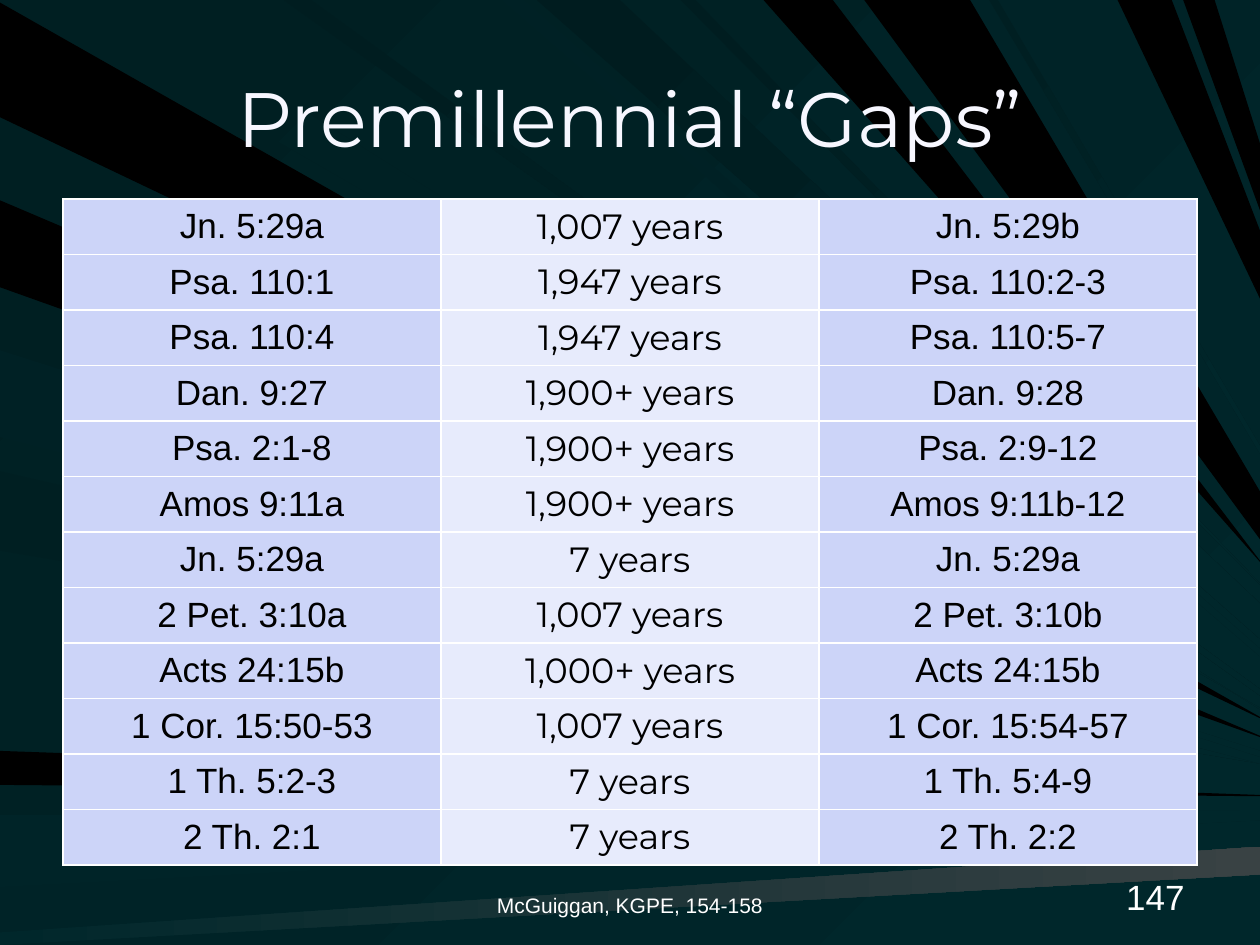
from lxml.etree import SubElement
from pptx import Presentation
from pptx.dml.color import RGBColor
from pptx.enum.text import MSO_ANCHOR, PP_ALIGN
from pptx.oxml.ns import qn
from pptx.util import Cm, Pt

COLORS = {
    "black": "000000", "white": "FFFFFF", "title": "F7F7FF",
    "reference": "CCD4F8", "gap": "E7EBFC",
    "teal": "00272B", "abyss": "001C1F", "deep": "001D20", "dark": "001F22",
    "mid": "002125", "light": "002428", "slate": "394244",
}
HEAD_FONT, BODY_FONT = "Montserrat", "Arial"
RAY_UNIT = Cm(0.0254)
RIGHT_EDGE = 1000

# Edge the ray starts on, colours, start span on that edge, end span on the right edge
RAYS = [
    ("left", ["black"], (2, 93), (569, 570)),
    ("top", ["dark", "teal"], (26, 101), (562, 563)),
    ("left", ["black"], (596, 623), (631, 632)),
    ("left", ["light", "teal"], (647, 704), (643, 651)),
    ("left", ["teal", "slate"], (740, 750), (672, 694)),
    ("left", ["black"], (159, 228), (584, 585)),
    ("top", ["mid", "teal"], (398, 416), (521, 515)),
    ("top", ["abyss", "teal"], (426, 492), (507, 479)),
    ("top", ["deep", "teal"], (540, 552), (464, 463)),
    ("top", ["black"], (606, 661), (446, 445)),
    ("top", ["black"], (887, 930), (237, 183)),
    ("top", ["black"], (939, 964), (167, 114)),
    ("left", ["mid", "teal"], (278, 342), (596, 602)),
    ("left", ["dark", "teal"], (374, 437), (605, 606)),
    ("top", ["deep", "teal"], (225, 247), (552, 547)),
    ("top", ["black"], (686, 770), (428, 390)),
    ("top", ["dark", "teal"], (785, 792), (360, 354)),
    ("left", ["mid", "teal"], (283, 347), (601, 606)),
]

GAPS = [
    ("Jn. 5:29a", "1,007 years", "Jn. 5:29b"),
    ("Psa. 110:1", "1,947 years", "Psa. 110:2-3"),
    ("Psa. 110:4", "1,947 years", "Psa. 110:5-7"),
    ("Dan. 9:27", "1,900+ years", "Dan. 9:28"),
    ("Psa. 2:1-8", "1,900+ years", "Psa. 2:9-12"),
    ("Amos 9:11a", "1,900+ years", "Amos 9:11b-12"),
    ("Jn. 5:29a", "7 years", "Jn. 5:29a"),
    ("2 Pet. 3:10a", "1,007 years", "2 Pet. 3:10b"),
    ("Acts 24:15b", "1,000+ years", "Acts 24:15b"),
    ("1 Cor. 15:50-53", "1,007 years", "1 Cor. 15:54-57"),
    ("1 Th. 5:2-3", "7 years", "1 Th. 5:4-9"),
    ("2 Th. 2:1", "7 years", "2 Th. 2:2"),
]


def rgb(name):
    return RGBColor.from_string(COLORS[name])


def paint(fill, names, angle=0):
    """Fill with one colour, or with a gradient between two."""
    if len(names) == 1:
        fill.solid()
        fill.fore_color.rgb = rgb(names[0])
        return
    fill.gradient()
    fill.gradient_angle = -angle % 360
    for stop, name in zip(fill.gradient_stops, names):
        stop.color.rgb = rgb(name)


def add_rays(s):
    group = s.shapes.add_group_shape()
    for edge, names, starts, ends in RAYS:
        near, far = [(0, v) if edge == "left" else (v, 0) for v in starts]
        far_end, near_end = [(RIGHT_EDGE, y) for y in reversed(ends)]
        builder = group.shapes.build_freeform(*near, scale=RAY_UNIT)
        builder.add_line_segments([far, far_end, near_end], close=True)
        ray = builder.convert_to_shape()
        ray.shadow.inherit = False
        ray.line.fill.background()
        paint(ray.fill, names, 0 if edge == "left" else 45)


def write(tf, text, size, font, color, align=PP_ALIGN.CENTER):
    p = tf.paragraphs[0]
    p.alignment = align
    r = p.add_run()
    r.text = text
    r.font.size = Pt(size)
    r.font.name = font
    r.font.color.rgb = rgb(color)


def add_title(s, text):
    title = s.shapes.title
    title.left, title.top, title.width, title.height = Cm(1.27), Cm(0.76), Cm(22.86), Cm(3.18)
    title.text_frame.vertical_anchor = MSO_ANCHOR.MIDDLE
    write(title.text_frame, text, 44, HEAD_FONT, "title")
    s.shapes._spTree.append(title._element)  # bring in front of the rays


def add_borders(cell):
    tcPr = cell._tc.get_or_add_tcPr()
    for i, side in enumerate(("lnL", "lnR", "lnT", "lnB")):
        ln = SubElement(tcPr, qn(f"a:{side}"), w=str(Pt(1)))
        fill = SubElement(ln, qn("a:solidFill"))
        SubElement(fill, qn("a:srgbClr"), val=COLORS["white"])
        tcPr.insert(i, ln)


def add_gap_table(s):
    row_height = Cm(1.1)
    table = s.shapes.add_table(len(GAPS), 3, Cm(1.27), Cm(4.01), Cm(22.86),
                               row_height * len(GAPS)).table
    table.first_row = table.horz_banding = False
    for i, row in enumerate(GAPS):
        for j, text in enumerate(row):
            cell = table.cell(i, j)
            is_gap = j == 1
            cell.vertical_anchor = MSO_ANCHOR.MIDDLE
            paint(cell.fill, ["gap" if is_gap else "reference"])
            add_borders(cell)
            write(cell.text_frame, text, 20, HEAD_FONT if is_gap else BODY_FONT, "black")


def add_footer(s, text, left, width, size, align):
    tf = s.shapes.add_textbox(left, Cm(17.35), width, Cm(1.27)).text_frame
    tf.word_wrap = True
    tf.vertical_anchor = MSO_ANCHOR.BOTTOM
    write(tf, text, size, BODY_FONT, "white", align)


def main():
    prs = Presentation()
    prs.slide_width, prs.slide_height = Cm(25.4), Cm(19.05)
    s = prs.slides.add_slide(prs.slide_layouts[5])
    paint(s.background.fill, ["dark", "teal"], 45)
    add_rays(s)
    add_title(s, "Premillennial “Gaps”")
    add_gap_table(s)
    add_footer(s, "McGuiggan, KGPE, 154-158", Cm(8.68), Cm(8.04), 12, PP_ALIGN.CENTER)
    add_footer(s, "147", Cm(18.2), Cm(5.93), 20, PP_ALIGN.RIGHT)
    prs.save("out.pptx")


if __name__ == "__main__":
    main()
